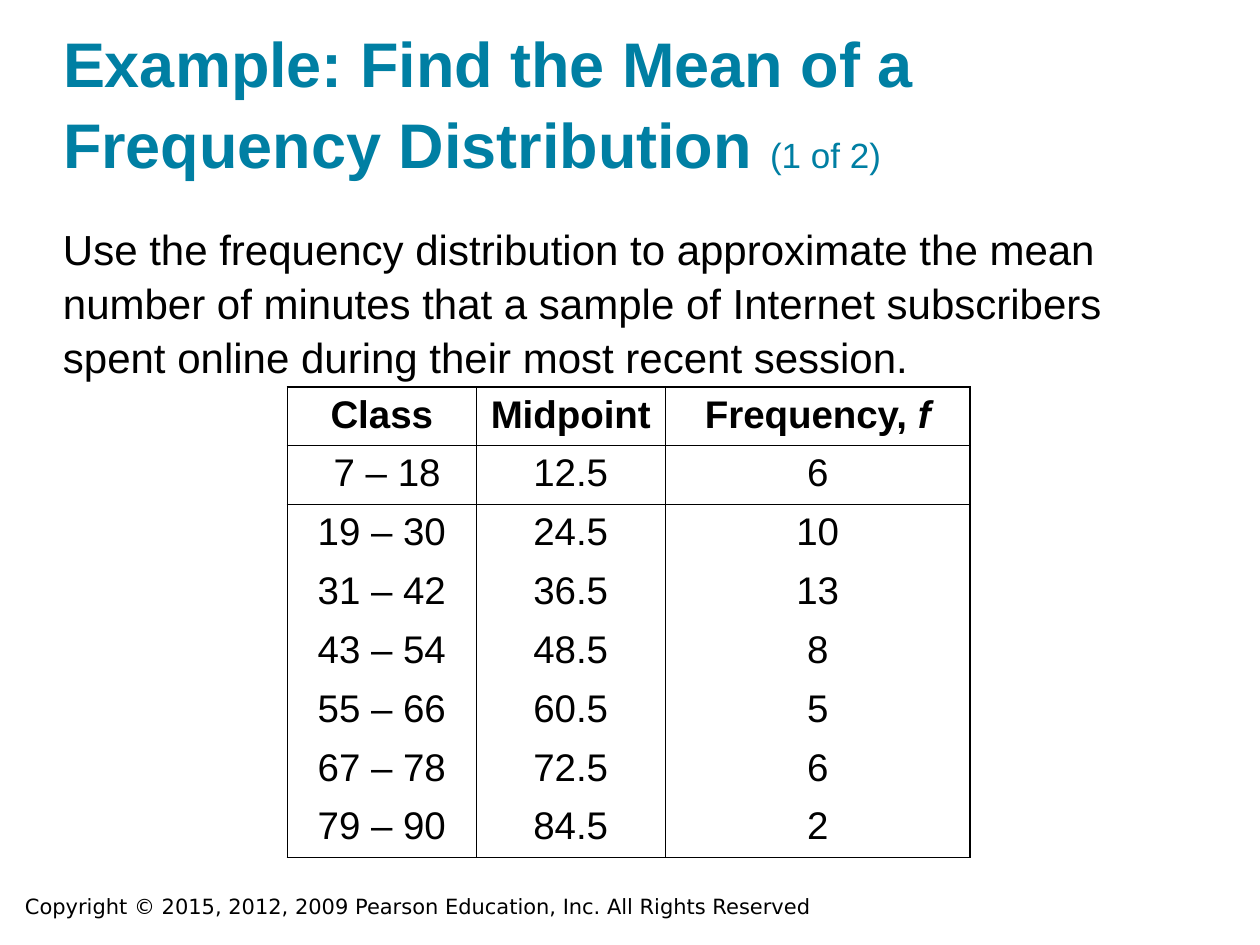
from lxml import etree
from pptx import Presentation
from pptx.dml.color import RGBColor
from pptx.enum import text
from pptx.oxml import ns
from pptx.util import Inches, Pt

# Content
TITLE = [("Example: Find the Mean of a Frequency Distribution ", 36, True),
         ("(1 of 2)", 20, False)]
BODY = ("Use the frequency distribution to approximate the mean number of minutes "
        "that a sample of Internet subscribers spent online during their most "
        "recent session.")
COPYRIGHT = "Copyright © 2015, 2012, 2009 Pearson Education, Inc. All Rights Reserved"
HEADER = ["Class", "Midpoint", "Frequency, "]
ROWS = [
    (" 7 – 18", "12.5", "6"),
    ("19 – 30", "24.5", "10"),
    ("31 – 42", "36.5", "13"),
    ("43 – 54", "48.5", "8"),
    ("55 – 66", "60.5", "5"),
    ("67 – 78", "72.5", "6"),
    ("79 – 90", "84.5", "2"),
]
COL_WIDTHS = [1.5, 1.5, 2.42]
ROW_HEIGHT = 0.43
TEAL, BLACK = "007FA3", "000000"


def place(sp, left, top, width, height):
    sp.left, sp.top = Inches(left), Inches(top)
    sp.width, sp.height = Inches(width), Inches(height)


def style(r, size, color=BLACK, bold=False, italic=False, name="Arial"):
    f = r.font
    f.name, f.size, f.bold, f.italic = name, Pt(size), bold, italic
    f.color.rgb = RGBColor.from_string(color)


def no_insets(tf):
    tf.margin_left = tf.margin_right = tf.margin_top = tf.margin_bottom = 0


def set_borders(cell, lined):
    """Draw a 1 pt line on the sides in lined and none on the others."""
    tcPr = cell._tc.get_or_add_tcPr()
    for i, side in enumerate("LRTB"):
        ln = etree.Element(ns.qn("a:ln" + side), w=str(Pt(1)))
        if side in lined:
            fill = etree.SubElement(ln, ns.qn("a:solidFill"))
            etree.SubElement(fill, ns.qn("a:srgbClr"), val=BLACK)
        else:
            etree.SubElement(ln, ns.qn("a:noFill"))
        tcPr.insert(i, ln)


prs = Presentation()
prs.slide_width, prs.slide_height = Inches(10), Inches(7.5)
s = prs.slides.add_slide(prs.slide_layouts[5])

# Copyright line
sp = s.shapes.add_textbox(Inches(0.1), Inches(7.04), Inches(7.83), Inches(0.3))
tf = sp.text_frame
tf.word_wrap = True
tf.text = COPYRIGHT
style(tf.paragraphs[0].runs[0], 12, name="DejaVu Sans")

# Title
sp = s.shapes.title
place(sp, 0.5, 0.24, 9, 1.2)
tf = sp.text_frame
no_insets(tf)
tf.auto_size = text.MSO_AUTO_SIZE.NONE
tf.vertical_anchor = text.MSO_ANCHOR.BOTTOM
p = tf.paragraphs[0]
p.alignment = text.PP_ALIGN.LEFT
p.line_spacing = 1.07
for words, size, bold in TITLE:
    r = p.add_run()
    r.text = words
    style(r, size, TEAL, bold)

# Task
sp = s.shapes.add_textbox(Inches(0.5), Inches(1.75), Inches(9), Inches(1.17))
tf = sp.text_frame
no_insets(tf)
tf.word_wrap = True
tf.text = BODY
p = tf.paragraphs[0]
p.line_spacing = 1.07
style(p.runs[0], 24)

# Frequency table
grid = [HEADER] + ROWS
last = len(grid) - 1
table = s.shapes.add_table(
    len(grid), len(COL_WIDTHS), Inches(2.28), Inches(3.07),
    Inches(sum(COL_WIDTHS)), Inches(ROW_HEIGHT * len(grid))).table
table.horz_banding = table.first_row = False
for col, width in zip(table.columns, COL_WIDTHS):
    col.width = Inches(width)
for i, values in enumerate(grid):
    table.rows[i].height = Inches(ROW_HEIGHT)
    # Lines frame the header, the first class and the foot of the table
    lined = "LR" + ("T" if i <= 2 else "") + ("B" if i <= 1 or i == last else "")
    for j, value in enumerate(values):
        cell = table.cell(i, j)
        cell.fill.background()
        set_borders(cell, lined)
        cell.text_frame.text = value
        p = cell.text_frame.paragraphs[0]
        p.alignment = text.PP_ALIGN.CENTER
        style(p.runs[0], 22, bold=i == 0)

# Italic symbol after the last heading
r = table.cell(0, 2).text_frame.paragraphs[0].add_run()
r.text = "f"
style(r, 22, bold=True, italic=True)

prs.save("out.pptx")
